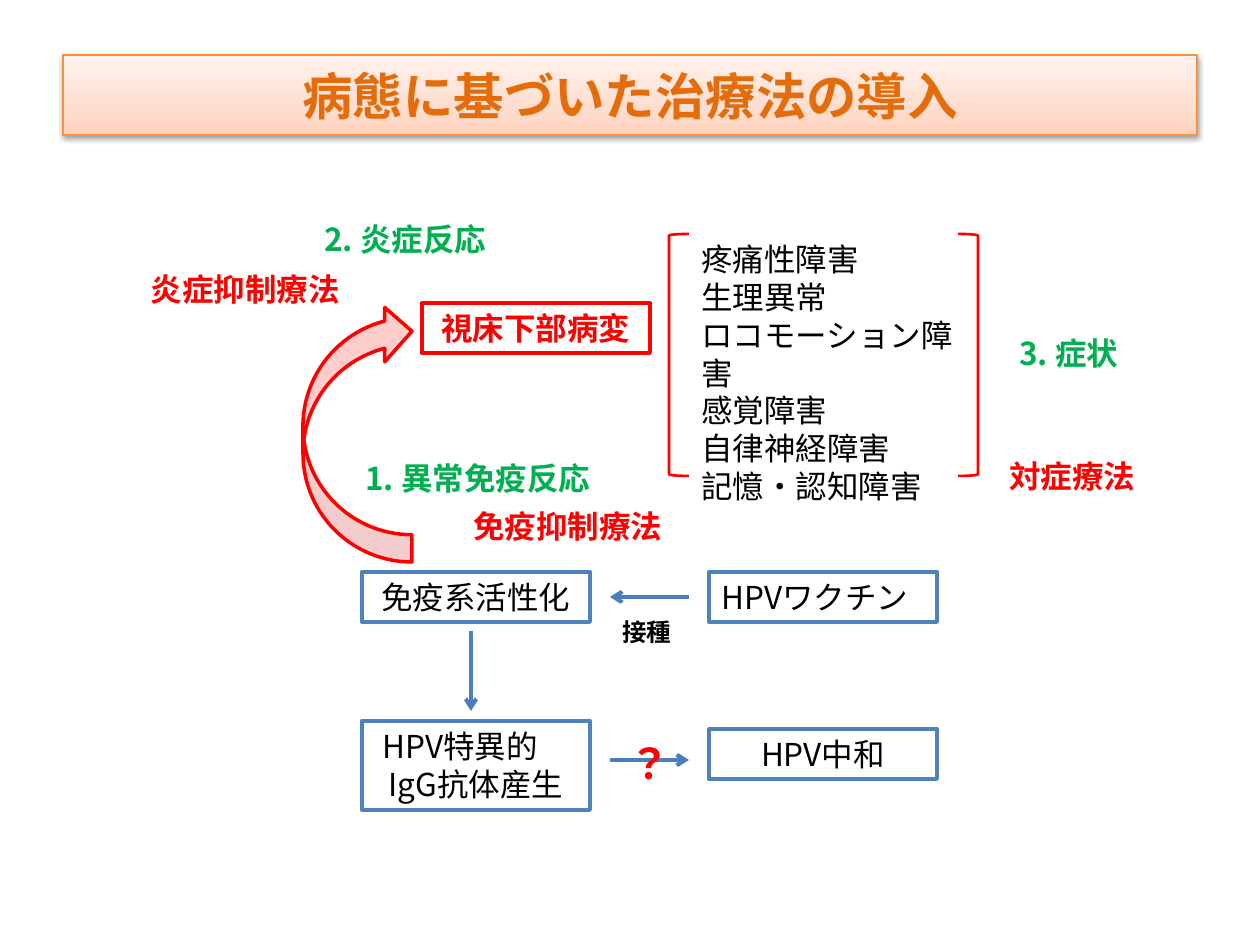
from copy import deepcopy

from lxml import etree
from pptx import Presentation
from pptx.dml.color import RGBColor
from pptx.enum.shapes import MSO_CONNECTOR, MSO_SHAPE
from pptx.enum.text import MSO_ANCHOR, MSO_AUTO_SIZE, PP_ALIGN
from pptx.oxml.ns import qn
from pptx.util import Inches, Pt

RECT, BRACKET = MSO_SHAPE.RECTANGLE, MSO_SHAPE.LEFT_BRACKET
CURVED_ARROW = MSO_SHAPE.CURVED_RIGHT_ARROW
LEFT, CENTER, RIGHT = PP_ALIGN.LEFT, PP_ALIGN.CENTER, PP_ALIGN.RIGHT
TOP, MIDDLE = MSO_ANCHOR.TOP, MSO_ANCHOR.MIDDLE
FIT_SHAPE, NO_FIT = MSO_AUTO_SIZE.SHAPE_TO_FIT_TEXT, MSO_AUTO_SIZE.NONE
STRAIGHT = MSO_CONNECTOR.STRAIGHT

PX_PER_INCH = 126
TITLE_ONLY = 5


def px(value):
    return round(value * Inches(1) / PX_PER_INCH)


def rgb(color):
    return RGBColor.from_string(color)


def add_xml(parent, tag, **attributes):
    return etree.SubElement(parent, qn(tag), attributes)


class Diagram:
    FONT, LATIN = "Noto Sans CJK JP", "Calibri"
    BLACK, RED, GREEN, ORANGE = "000000", "FF0000", "00B050", "E46C0A"
    BOX_LINE, ARROW_LINE, TITLE_LINE = "4F81BD", "4B7EBC", "F69240"
    TITLE_STOPS = [(0, "FFD2BD"), (0.35, "FFDED0"), (1, "FFF2ED")]

    def __init__(self, slide):
        self.slide = slide

    def set_text(self, frame, lines, size=18, color=BLACK, bold=False,
                 align=LEFT, font=FONT, anchor=TOP, fit=FIT_SHAPE):
        frame.text = "\n".join(lines)
        frame.word_wrap = True
        frame.auto_size = fit
        frame.vertical_anchor = anchor
        for paragraph in frame.paragraphs:
            paragraph.alignment = align
            paragraph.font.size = Pt(size)
            paragraph.font.bold = bold
            paragraph.font.color.rgb = rgb(color)
            paragraph.font.name = font
            defaults = paragraph._p.pPr.find(qn("a:defRPr"))
            add_xml(defaults, "a:ea", typeface=self.FONT)

    def outline(self, shape, color, width):
        shape.line.color.rgb = rgb(color)
        shape.line.width = Pt(width)

    def title(self, text, x, y, w, h):
        title = self.slide.shapes.title
        title.left, title.top, title.width, title.height = map(px, (x, y, w, h))
        self.outline(title, self.TITLE_LINE, 0.75)
        # Three-stop gradient running upwards
        title.fill.gradient()
        title.fill.gradient_angle = 90
        stops = title._element.spPr.find(qn("a:gradFill")).find(qn("a:gsLst"))
        stops.insert(1, deepcopy(stops[0]))
        for stop, (position, color) in zip(title.fill.gradient_stops, self.TITLE_STOPS):
            stop.position = position
            stop.color.rgb = rgb(color)
        # Soft shadow below
        effects = add_xml(title._element.spPr, "a:effectLst")
        shadow = add_xml(effects, "a:outerShdw", blurRad="40000", dist="20000",
                         dir="5400000", rotWithShape="0")
        add_xml(add_xml(shadow, "a:srgbClr", val=self.BLACK), "a:alpha", val="38000")
        self.set_text(title.text_frame, [text], 28.8, self.ORANGE, True, CENTER,
                      anchor=MIDDLE, fit=NO_FIT)

    def shape(self, kind, x, y, w, h, color, width, flip=None):
        shape = self.slide.shapes.add_shape(kind, px(x), px(y), px(w), px(h))
        shape.shadow.inherit = False
        shape.fill.background()
        self.outline(shape, color, width)
        if flip:
            shape._element.spPr.xfrm.set(flip, "1")
        return shape

    def box(self, text, x, y, h=50, line=BOX_LINE, **style):
        box = self.shape(RECT, x, y, 228, h, line, 2.25)
        self.set_text(box.text_frame, [text], **{"align": CENTER, **style})

    def curved_arrow(self, x, y, w, h):
        arrow = self.shape(CURVED_ARROW, x, y, w, h, self.RED, 2, "flipV")
        arrow.fill.solid()
        arrow.fill.fore_color.rgb = rgb(self.RED)
        color = arrow._element.spPr.find(qn("a:solidFill"))[0]
        add_xml(color, "a:alpha", val="20000")

    def bracket(self, x, y, h, flip=None):
        self.shape(BRACKET, x, y, 20, h, self.RED, 1.5, flip)

    def arrow(self, x1, y1, x2, y2):
        arrow = self.slide.shapes.add_connector(STRAIGHT, px(x1), px(y1), px(x2), px(y2))
        self.outline(arrow, self.ARROW_LINE, 2.25)
        properties = arrow._element.spPr
        add_xml(properties.find(qn("a:ln")), "a:tailEnd", type="arrow")
        add_xml(properties, "a:effectLst")

    def label(self, lines, x, y, w, h=50, **style):
        label = self.slide.shapes.add_textbox(px(x), px(y), px(w), px(h))
        self.set_text(label.text_frame, lines, **style)


def main():
    prs = Presentation()
    prs.slide_width, prs.slide_height = px(1260), px(945)
    diagram = Diagram(prs.slides.add_slide(prs.slide_layouts[TITLE_ONLY]))
    diagram.title("病態に基づいた治療法の導入", 63, 55, 1134, 80)

    # Vaccine, immune activation and antibodies
    immune_x, vaccine_x = 362, 709
    gap_left, gap_right = 610, 689
    diagram.box("HPVワクチン", vaccine_x, 572, align=LEFT)
    diagram.box("免疫系活性化", immune_x, 572)
    diagram.box("HPV特異的　IgG抗体産生", immune_x, 721, h=89)
    diagram.arrow(gap_right, 597, gap_left, 597)
    diagram.arrow(471, 631, 471, 711)
    diagram.arrow(gap_left, 760, gap_right, 760)
    diagram.box("HPV中和", vaccine_x, 729)
    diagram.label(["接種"], gap_left, 611, 79, 43, size=14, bold=True)
    diagram.label(["？"], gap_left, 731, 79, 63, size=24, bold=True,
                  color=Diagram.RED, align=CENTER)

    # Hypothalamic lesion
    diagram.curved_arrow(303, 304, 109, 258)
    diagram.box("視床下部病変", 422, 303, line=Diagram.RED, color=Diagram.RED, bold=True)

    # Bracketed symptoms
    symptoms = ["疼痛性障害", "生理異常", "ロコモーション障害",
                "感覚障害", "自律神経障害", "記憶・認知障害"]
    diagram.bracket(669, 234, 242)
    diagram.label(symptoms, 689, 234, 277, 242, font=Diagram.LATIN)
    diagram.bracket(958, 234, 242, "flipH")

    # Numbered stages
    for stage, x, y, w in [("3. 症状", 1007, 328, 139),
                           ("1. 異常免疫反応", 353, 453, 258),
                           ("2. 炎症反応", 312, 214, 258)]:
        diagram.label([stage], x, y, w, color=Diagram.GREEN, bold=True)

    # Therapies
    for therapy, x, y, w, align in [("対症療法", 997, 451, 179, LEFT),
                                    ("免疫抑制療法", 461, 501, 248, LEFT),
                                    ("炎症抑制療法", 104, 264, 248, RIGHT)]:
        diagram.label([therapy], x, y, w, color=Diagram.RED, bold=True, align=align)

    prs.save("out.pptx")


if __name__ == "__main__":
    main()
